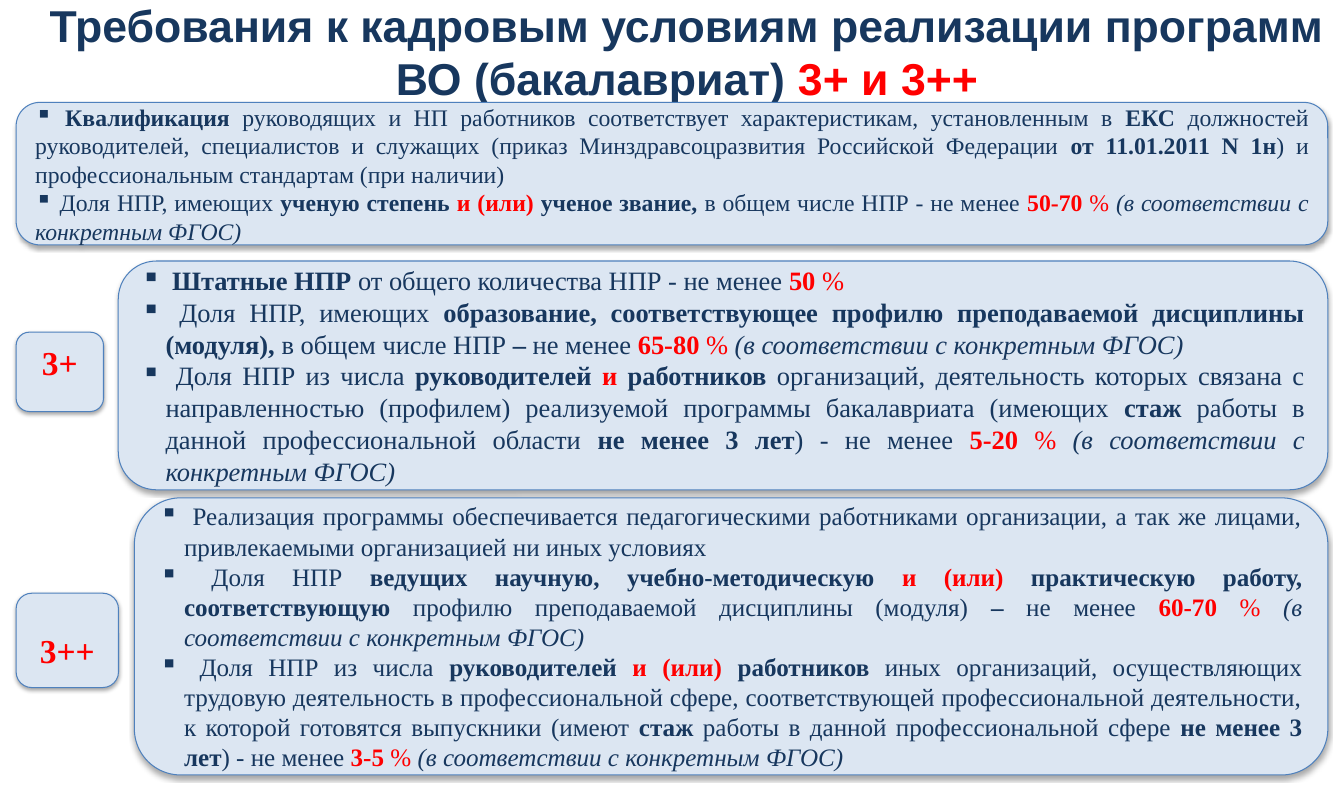
"""Build a slide on the staffing requirements for bachelor programmes."""
from dataclasses import dataclass

from lxml.etree import SubElement
from pptx import Presentation
from pptx.dml.color import RGBColor
from pptx.enum.shapes import MSO_SHAPE as Form
from pptx.enum.text import MSO_ANCHOR as Anchor, PP_ALIGN as Align
from pptx.oxml.ns import qn
from pptx.util import Inches, Pt

NAVY = RGBColor(0x17, 0x37, 0x5E)
RED = RGBColor(0xFF, 0x00, 0x00)
PALE = RGBColor(0xDC, 0xE6, 0xF2)
BLUE = RGBColor(0x4F, 0x81, 0xBD)
SERIF = "Times New Roman"
WIDE, HIGH = 13.39, 7.88
EDGE = 98.8
NORM = "_(в соответствии с конкретным ФГОС)_"


@dataclass(frozen=True)
class Card:
    """A rounded box placed in percent of the slide; * bold, ^ red, _ italic."""
    left: float
    top: float
    width: float
    height: float
    size: int
    lines: tuple[str, ...]
    hang: float = 0
    label: bool = False
    inset: float = 0.06


def panel(left: float, top: float, height: float, size: int,
          lines: tuple[str, ...], hang: float = 0.24) -> Card:
    """Describe a bulleted card that reaches the right edge."""
    return Card(left, top, EDGE - left, height, size, lines, hang)


CARDS = (
    panel(1.2, 12.94, 18.02, 17, (
        " *Квалификация* руководящих и НП работников соответствует характеристикам, "
        "установленным в *ЕКС *должностей руководителей, специалистов и служащих "
        "(приказ Минздравсоцразвития Российской Федерации *от 11.01.2011 N 1н*) "
        "и профессиональным стандартам (при наличии)",
        " Доля НПР, имеющих *ученую степень ^и (или) ^ученое звание, *"
        "в общем числе НПР - не менее ^*50-70* % ^" + NORM), hang=0),
    Card(1.2, 42, 6.5, 10.03, 24, ("*^3+^*",), label=True),
    Card(1.2, 75, 7.62, 11.93, 24, ("*^3++^*",), label=True, inset=0.32),
    panel(8.8, 33, 28.93, 19, (
        "* Штатные НПР* от общего количества НПР - не менее ^*50* %^",
        " Доля НПР, имеющих* образование, соответствующее профилю преподаваемой "
        "дисциплины (модуля), *в общем числе НПР* – *не менее ^*65-80* % ^" + NORM,
        " Доля НПР из числа *руководителей ^и^ работников *организаций, "
        "деятельность которых связана с направленностью (профилем) реализуемой "
        "программы бакалавриата (имеющих *стаж *работы в данной профессиональной "
        "области *не менее 3 лет*) - не менее ^*5-20* % ^" + NORM)),
    panel(10, 62.94, 35.03, 18, (
        " Реализация программы обеспечивается педагогическими работниками "
        "организации, а так же лицами, привлекаемыми организацией ни иных условиях",
        " Доля НПР *ведущих научную, учебно-методическую ^и (или) ^практическую "
        "работу, соответствующую *профилю преподаваемой дисциплины (модуля) "
        "*– *не менее ^*60-70* % ^" + NORM,
        " Доля НПР из числа *руководителей ^и (или) ^работников *иных организаций, "
        "осуществляющих трудовую деятельность в профессиональной сфере, "
        "соответствующей профессиональной деятельности, к которой готовятся "
        "выпускники (имеют *стаж *работы в данной профессиональной сфере "
        "*не менее 3 лет*) - не менее ^*3-5* % ^" + NORM)),
)


def place(left: float, top: float, width: float, height: float) -> tuple:
    """Turn percent of the slide into lengths."""
    return (Inches(WIDE * left / 100), Inches(HIGH * top / 100),
            Inches(WIDE * width / 100), Inches(HIGH * height / 100))


def add_run(para, text: str, marks: set[str]) -> None:
    """Add a run styled by the marks in force."""
    if text:
        run = para.add_run()
        run.text = text
        run.font.bold = "*" in marks
        run.font.italic = "_" in marks
        run.font.color.rgb = RED if "^" in marks else NAVY


def write(para, text: str, name: str, size: int) -> None:
    """Fill a paragraph from marked text."""
    para.font.name = name
    para.font.size = Pt(size)
    marks, part = set(), ""
    for char in text:
        if char in "*^_":
            add_run(para, part, marks)
            marks, part = marks ^ {char}, ""
        else:
            part += char
    add_run(para, part, marks)


def set_frame(frame, anchor, inset: float = 0.06) -> None:
    """Set wrapping, anchor and insets."""
    frame.word_wrap = True
    frame.vertical_anchor = anchor
    frame.margin_left = frame.margin_right = Inches(0.12)
    frame.margin_top, frame.margin_bottom = Inches(inset), Inches(0.06)


def add_bullet(para, hang: float) -> None:
    """Give a paragraph a square bullet with a hanging indent."""
    props = para._p.get_or_add_pPr()
    props.set("marL", str(Inches(hang)))
    props.set("indent", str(-Inches(hang)))
    mark = SubElement(props, qn("a:buChar"), char="▪")
    rest = props.find(qn("a:defRPr"))
    if rest is not None:
        rest.addprevious(mark)


def add_shade(shape) -> None:
    """Cast a soft shadow downwards."""
    shape.shadow.inherit = False
    effects = shape._element.spPr.find(qn("a:effectLst"))
    shade = SubElement(effects, qn("a:outerShdw"), blurRad=str(Pt(3.1)),
                       dist=str(Pt(1.8)), dir="5400000", rotWithShape="0")
    tint = SubElement(shade, qn("a:srgbClr"), val="000000")
    SubElement(tint, qn("a:alpha"), val="35000")


def add_card(slide, card: Card) -> None:
    """Draw one card with its text."""
    shape = slide.shapes.add_shape(
        Form.ROUNDED_RECTANGLE,
        *place(card.left, card.top, card.width, card.height))
    shape.fill.solid()
    shape.fill.fore_color.rgb = PALE
    shape.line.color.rgb = BLUE
    shape.line.width = Pt(0.75)
    add_shade(shape)
    frame = shape.text_frame
    set_frame(frame, Anchor.TOP if card.label else Anchor.MIDDLE, card.inset)
    for index, text in enumerate(card.lines):
        para = frame.add_paragraph() if index else frame.paragraphs[0]
        para.alignment = Align.CENTER if card.label else Align.JUSTIFY
        write(para, text, SERIF, card.size)
        if not card.label:
            add_bullet(para, card.hang)


def add_title(slide) -> None:
    """Draw the heading."""
    frame = slide.shapes.add_textbox(*place(2.32, 0, 97.6, 12.94)).text_frame
    set_frame(frame, Anchor.MIDDLE)
    para = frame.paragraphs[0]
    para.alignment = Align.CENTER
    write(para, "*Требования к кадровым условиям реализации программ "
                "ВО (бакалавриат) ^3+ и 3++^*", "Arial", 32)


def main() -> None:
    """Build and save the deck."""
    deck = Presentation()
    deck.slide_width, deck.slide_height = Inches(WIDE), Inches(HIGH)
    slide = deck.slides.add_slide(deck.slide_layouts[6])
    add_title(slide)
    for card in CARDS:
        add_card(slide, card)
    deck.save("out.pptx")


if __name__ == "__main__":
    main()
